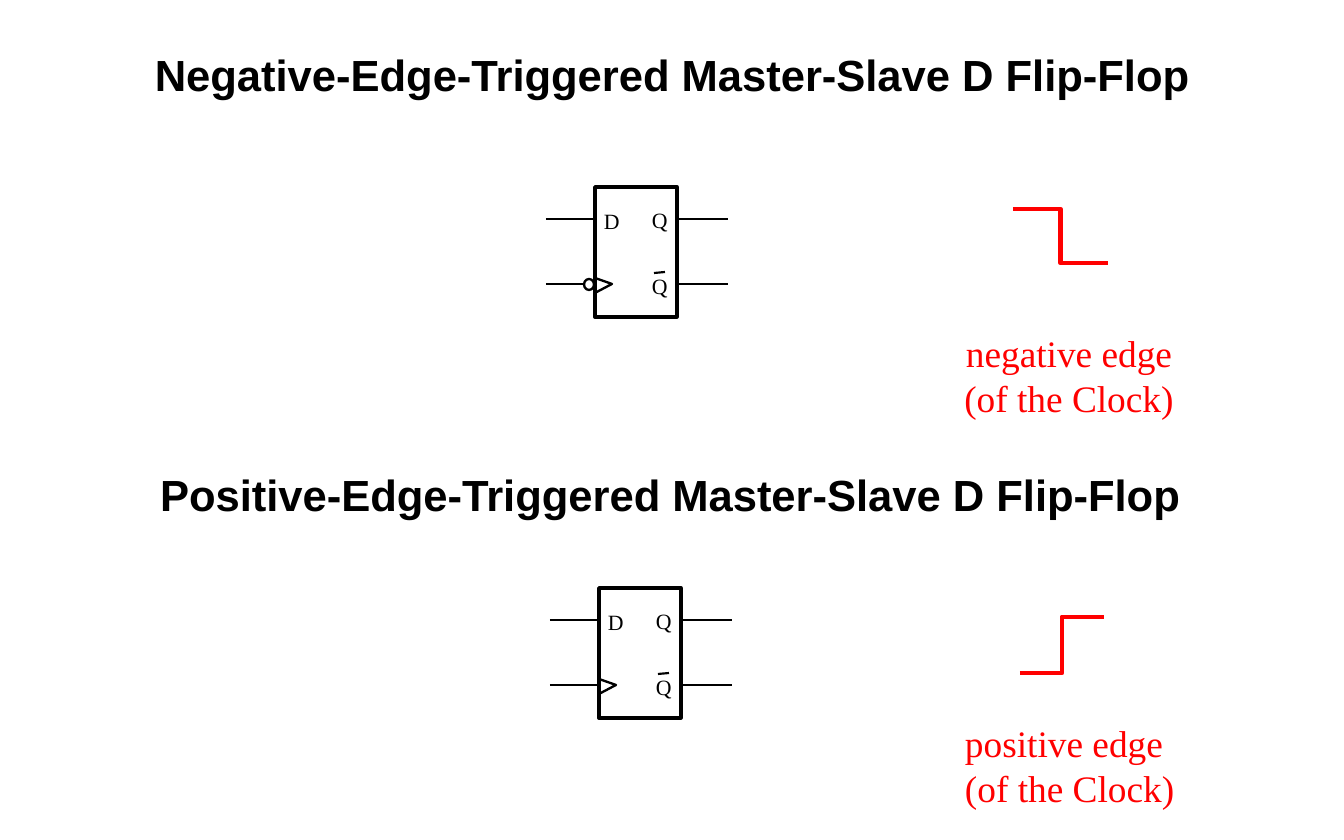
from lxml import etree
from pptx import Presentation
from pptx.dml.color import RGBColor
from pptx.enum.shapes import MSO_CONNECTOR, MSO_SHAPE
from pptx.enum.text import MSO_ANCHOR, MSO_AUTO_SIZE, PP_ALIGN
from pptx.oxml.ns import qn
from pptx.util import Emu, Pt

PX = 914400 // 112
STRAIGHT, ELBOW = MSO_CONNECTOR.STRAIGHT, MSO_CONNECTOR.ELBOW
RECTANGLE, OVAL = MSO_SHAPE.RECTANGLE, MSO_SHAPE.OVAL
LEFT, CENTER = PP_ALIGN.LEFT, PP_ALIGN.CENTER
MIDDLE, GROW = MSO_ANCHOR.MIDDLE, MSO_AUTO_SIZE.SHAPE_TO_FIT_TEXT
COLORS = {"ink": "000000", "paper": "FFFFFF", "edge": "FF0000"}
SANS, SERIF = "Arial", "Times New Roman"


def px(value):
    return Emu(value * PX)


def rgb(name):
    return RGBColor.from_string(COLORS[name])


class Diagram:
    """Draws on the slide, or on the group that was opened last."""

    def __init__(self, slide):
        self.slide = slide
        self.shapes = slide.shapes
        self.x = self.y = 0

    def open_group(self, x, y):
        """Send what follows into a group, measured from x, y."""
        self.shapes = self.slide.shapes.add_group_shape().shapes
        self.x, self.y = x, y

    def close_group(self):
        self.shapes = self.slide.shapes
        self.x = self.y = 0

    def place(self, x, y):
        return px(self.x + x), px(self.y + y)

    def outline(self, shape, color, weight):
        shape.line.color.rgb = rgb(color)
        shape.line.width = Pt(weight)

    def text(self, box, lines, size, font=SERIF, color="ink", bold=False, align=LEFT):
        x, y, width, height = box
        frame = self.shapes.add_textbox(*self.place(x, y), px(width), px(height)).text_frame
        frame.text = "\n".join(lines)
        for paragraph in frame.paragraphs:
            paragraph.alignment = align
            for run in paragraph.runs:
                run.font.size, run.font.name, run.font.bold = Pt(size), font, bold
                run.font.color.rgb = rgb(color)
        return frame

    def title(self, x, y, wording):
        frame = self.text((x, y, 1120, 75), [wording], 28, SANS, bold=True, align=CENTER)
        frame.word_wrap = True
        frame.vertical_anchor = MIDDLE

    def pin_name(self, x, y, name):
        frame = self.text((x, y, 21, 27), [name], 14)
        frame.margin_left = frame.margin_right = frame.margin_top = frame.margin_bottom = 0
        frame.word_wrap = False
        frame.auto_size = GROW

    def caption(self, box, lines, align, wrap):
        frame = self.text(box, lines, 24, color="edge", align=align)
        frame.word_wrap = wrap
        frame.auto_size = GROW

    def line(self, start, end, color="ink", weight=1.5, kind=STRAIGHT):
        connector = self.shapes.add_connector(kind, *self.place(*start), *self.place(*end))
        self.outline(connector, color, weight)
        etree.SubElement(connector._element.spPr, qn("a:effectLst"))

    def shape(self, kind, x, y, width, height, weight, filled=False):
        shape = self.shapes.add_shape(kind, *self.place(x, y), px(width), px(height))
        shape.shadow.inherit = False
        if filled:
            shape.fill.solid()
            shape.fill.fore_color.rgb = rgb("paper")
        else:
            shape.fill.background()
        self.outline(shape, "ink", weight)

    def open_path(self, first, *others):
        builder = self.shapes.build_freeform(*self.place(*first), scale=1.0)
        builder.add_line_segments([self.place(*point) for point in others], close=False)
        shape = builder.convert_to_shape()
        shape.shadow.inherit = False
        shape.fill.background()
        self.outline(shape, "ink", 1.5)

    def flip_flop(self, x, y, inverted_clock):
        width, height, lead = 82, 130, 49
        data_row, clock_row = 32, 97
        bubble = 11 if inverted_clock else 0
        self.open_group(x, y)
        self.shape(RECTANGLE, 0, 0, width, height, 2.25, filled=True)
        self.pin_name(9, 21, "D")
        for top in (20, 86):
            self.pin_name(57, top, "Q")
        self.line((70, 85), (59, 86), weight=1.38)
        self.open_path((0, 106), (17, clock_row), (0, 91))
        if inverted_clock:
            self.shape(OVAL, -bubble, 92, 10, 11, 1.5)
        for row, gap in ((data_row, 0), (clock_row, bubble)):
            self.line((-lead, row), (-gap, row))
            self.line((width + lead + 2, row), (width, row))
        self.close_group()

    def clock_edge(self, start, end):
        self.line(start, end, "edge", 3, ELBOW)


def main():
    deck = Presentation()
    deck.slide_width, deck.slide_height = px(1344), px(840)
    diagram = Diagram(deck.slides.add_slide(deck.slide_layouts[6]))

    diagram.title(112, 37, "Negative-Edge-Triggered Master-Slave D Flip-Flop")
    diagram.title(110, 457, "Positive-Edge-Triggered Master-Slave D Flip-Flop")

    diagram.flip_flop(595, 187, inverted_clock=True)
    diagram.clock_edge((1013, 209), (1108, 263))
    diagram.caption((952, 325, 234, 102), ["negative edge", "(of the Clock)"], CENTER, False)

    diagram.flip_flop(599, 588, inverted_clock=False)
    diagram.clock_edge((1020, 673), (1104, 617))
    diagram.caption((954, 715, 259, 102), ["positive edge", "(of the Clock)"], LEFT, True)

    deck.save("out.pptx")


if __name__ == "__main__":
    main()
